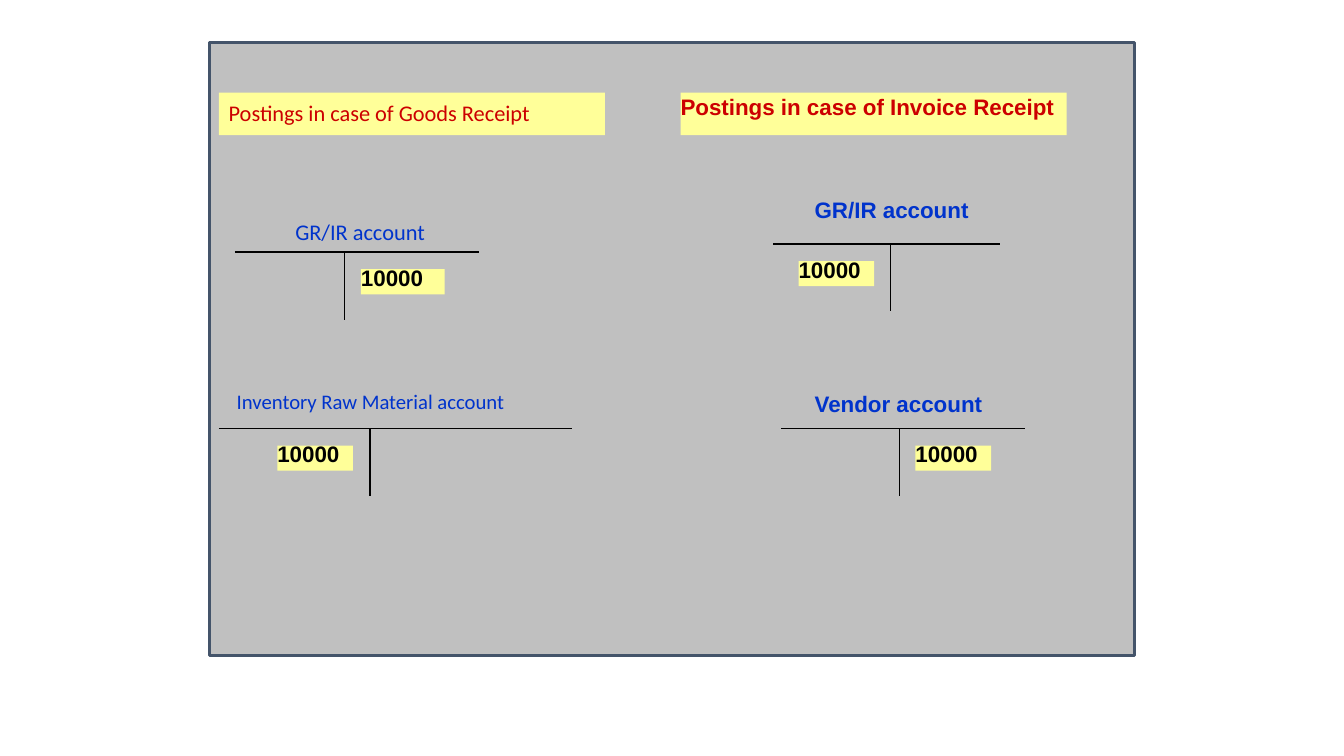
from lxml import etree
from pptx import Presentation
from pptx.dml.color import RGBColor
from pptx.enum.shapes import MSO_CONNECTOR, MSO_SHAPE
from pptx.enum.text import MSO_ANCHOR, PP_ALIGN
from pptx.oxml.ns import qn
from pptx.util import Inches, Pt

STRAIGHT = MSO_CONNECTOR.STRAIGHT
RECTANGLE = MSO_SHAPE.RECTANGLE
TOP, MIDDLE = MSO_ANCHOR.TOP, MSO_ANCHOR.MIDDLE
LEFT = PP_ALIGN.LEFT

COLORS = {
    "panel": "C0C0C0",
    "frame": "44546A",
    "highlight": "FFFF99",
    "heading": "CC0000",
    "account": "0033CC",
    "ink": "000000",
}
ARIAL = {"name": "Arial", "size": Pt(16), "bold": True}
CALIBRI = {"name": "Calibri", "size": Pt(16), "bold": False}
CALIBRI_SMALL = {**CALIBRI, "size": Pt(14.8)}
STEM_HEIGHT = 0.67


def color(key):
    return RGBColor.from_string(COLORS[key])


class PostingSlide:
    def __init__(self, slide):
        self.shapes = slide.shapes

    def panel(self, box, fill, frame=None):
        panel = self.shapes.add_shape(RECTANGLE, *map(Inches, box))
        panel.shadow.inherit = False
        panel.fill.solid()
        panel.fill.fore_color.rgb = color(fill)
        if frame:
            panel.line.color.rgb = color(frame)
            panel.line.width = Pt(2.25)
        else:
            panel.line.fill.background()
        return panel

    def label(self, holder, text, font, ink, spacing=0.8, hanging=0.38,
              margins=(0, 0), anchor=TOP):
        """Put one left-aligned paragraph in a shape or text box."""
        frame = holder.text_frame
        across, down = map(Inches, margins)
        frame_format = {
            "word_wrap": True, "vertical_anchor": anchor,
            "margin_left": across, "margin_right": across,
            "margin_top": down, "margin_bottom": down,
        }
        paragraph = frame.paragraphs[0]
        run = paragraph.add_run()
        run.text = text
        run.font.color.rgb = color(ink)
        formats = (
            (frame, frame_format),
            (paragraph, {"alignment": LEFT, "line_spacing": spacing}),
            (run.font, font),
        )
        for target, values in formats:
            for name, value in values.items():
                setattr(target, name, value)
        if hanging:
            properties = paragraph._p.get_or_add_pPr()
            properties.set("marL", str(Inches(hanging)))
            properties.set("indent", str(-Inches(hanging)))

    def heading(self, box, text, font, **layout):
        self.label(self.panel(box, "highlight"), text, font, "heading",
                   hanging=0, **layout)

    def account_name(self, box, text, font, **layout):
        name_box = self.shapes.add_textbox(*map(Inches, box))
        self.label(name_box, text, font, "account", **layout)

    def rule(self, x1, y1, x2, y2):
        rule = self.shapes.add_connector(STRAIGHT, *map(Inches, (x1, y1, x2, y2)))
        rule.line.color.rgb = color("ink")
        rule.line.width = Pt(1)
        etree.SubElement(rule._element.spPr, qn("a:effectLst"))

    def t_account(self, left, right, stem, top, amount_left, amount_width=0.75):
        """Draw the T of an account with the amount posted beside its stem."""
        self.rule(left, top, right, top)
        self.rule(stem, top, stem, top + STEM_HEIGHT)
        amount = self.panel((amount_left, top + 0.17, amount_width, 0.25), "highlight")
        self.label(amount, "10000", ARIAL, "ink")


def main():
    presentation = Presentation()
    presentation.slide_width = Inches(13.33)
    presentation.slide_height = Inches(7.5)
    blank = presentation.slide_layouts[6]
    postings = PostingSlide(presentation.slides.add_slide(blank))

    postings.panel((2.08, 0.42, 9.17, 6.08), "panel", "frame")

    # Goods receipt
    padded = {"margins": (0.1, 0.05)}
    postings.heading((2.17, 0.92, 3.83, 0.42), "Postings in case of Goods Receipt",
                     CALIBRI, spacing=0.9, anchor=MIDDLE, **padded)
    postings.account_name((2.83, 2.17, 1.75, 0.33), "GR/IR account", CALIBRI,
                          hanging=0.25, **padded)
    postings.account_name((2.25, 3.9, 3.44, 0.27), "Inventory Raw Material account",
                          CALIBRI_SMALL, spacing=0.6, hanging=0.25, **padded)
    postings.t_account(2.33, 4.75, 3.42, 2.5, 3.58, amount_width=0.83)
    postings.t_account(2.17, 5.67, 3.67, 4.25, 2.75)

    # Invoice receipt
    postings.heading((6.75, 0.92, 3.83, 0.42), "Postings in case of Invoice Receipt",
                     ARIAL, spacing=1.0)
    postings.account_name((8.08, 2, 1.75, 0.33), "GR/IR account", ARIAL)
    postings.account_name((8.08, 3.92, 1.83, 0.33), "Vendor account", ARIAL)
    postings.t_account(7.67, 9.92, 8.83, 2.42, 7.92)
    postings.t_account(7.75, 10.17, 8.92, 4.25, 9.08)

    presentation.save("out.pptx")


if __name__ == "__main__":
    main()
